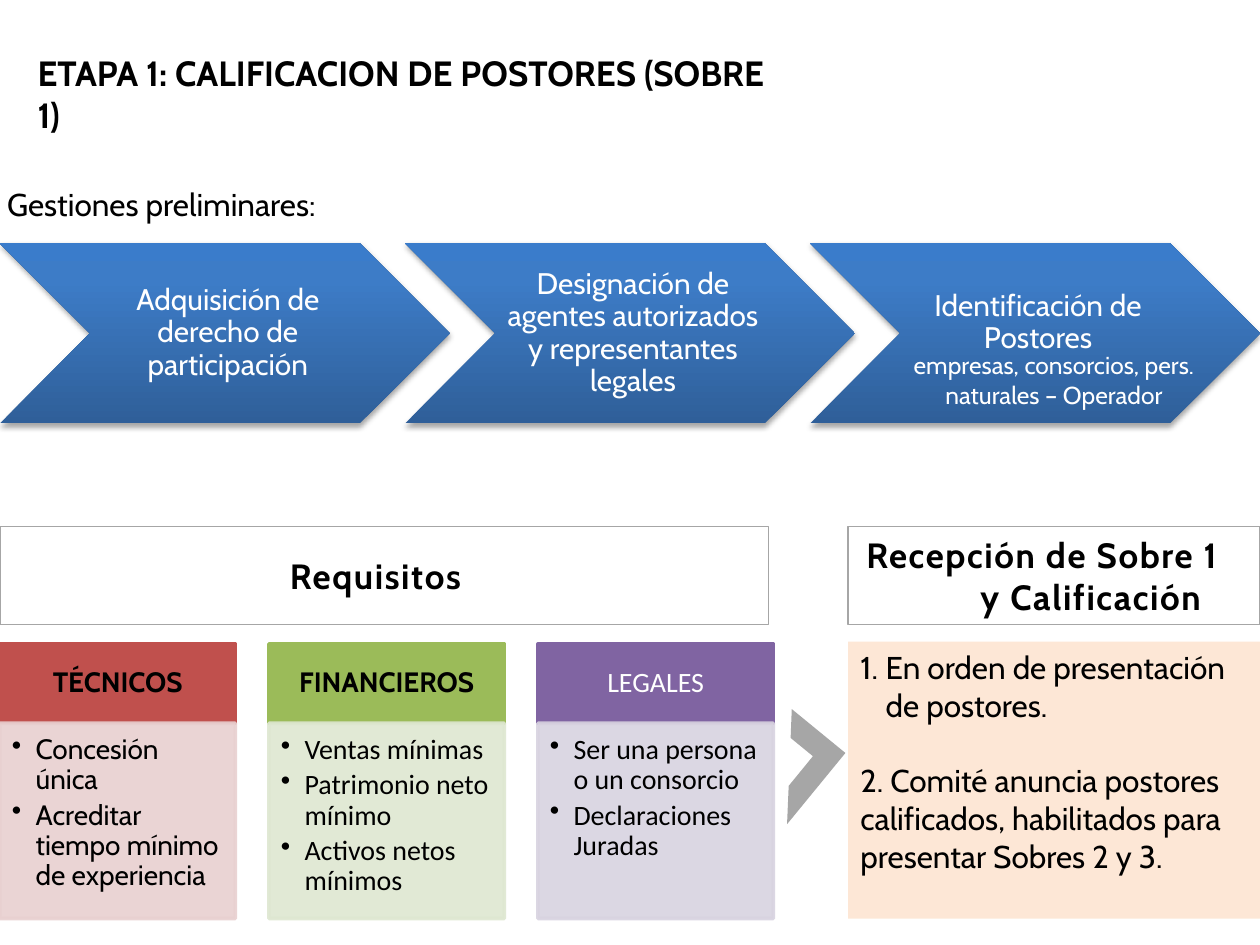
from lxml.etree import SubElement
from pptx import Presentation
from pptx.dml.color import RGBColor
from pptx.enum.shapes import MSO_SHAPE
from pptx.enum.text import MSO_ANCHOR, PP_ALIGN
from pptx.oxml import parse_xml
from pptx.oxml.ns import nsdecls, qn
from pptx.util import Pt

TITLE = "ETAPA 1: CALIFICACION DE POSTORES (SOBRE 1)"
SUBTITLE = "Gestiones preliminares:"
STEPS = [
    "Adquisición de derecho de participación",
    "Designación de agentes autorizados y representantes legales",
    "Identificación de Postores",
]
STEP_NOTE = "empresas, consorcios, pers. naturales – Operador"
# heading, heading font, heading colour, bold, body font, fill, pale fill, items
REQUIREMENTS = [
    ("TÉCNICOS", "Cabin", "000000", True, "Cabin", "C0504D", "E8D0D0",
     ["Concesión única", "Acreditar tiempo mínimo de experiencia"]),
    ("FINANCIEROS", "Cabin", "000000", True, "Calibri", "9BBB59", "DEE7D1",
     ["Ventas mínimas", "Patrimonio neto mínimo", "Activos netos mínimos"]),
    ("LEGALES", "Calibri", "FFFFFF", False, "Calibri", "8064A2", "D8D3E0",
     ["Ser una persona o un consorcio", "Declaraciones Juradas"]),
]
# text, left margin, right margin
REQ_HEADER = [("Requisitos", 0, 10)]
RECEPTION_HEADER = [("Recepción de Sobre 1", 0, 14), ("y Calificación", 42, 0)]
RECEPTION = [
    "En orden de presentación de postores.",
    "2. Comité anuncia postores calificados, habilitados para presentar Sobres 2 y 3.",
]
GREY = "A6A6A6"
STEP_GRADIENT = [(0, "2F5F99"), (80, "3D7CC7"), (100, "3A7CCB")]
DEFAULT_INSETS = (7.2, 3.6, 7.2, 3.6)

prs = Presentation()
prs.slide_width, prs.slide_height = Pt(720), Pt(540)
s = prs.slides.add_slide(prs.slide_layouts[6])


def color(target, value, alpha=100):
    """Give a fill a solid colour, with optional opacity in percent."""
    target.solid()
    target.fore_color.rgb = RGBColor.from_string(value)
    if alpha < 100:
        clr = target._xPr.find(".//" + qn("a:srgbClr"))
        SubElement(clr, qn("a:alpha"), val=str(alpha * 1000))


def frame(sp, insets=DEFAULT_INSETS, anchor=MSO_ANCHOR.TOP):
    tf = sp.text_frame
    tf.word_wrap = True
    tf.vertical_anchor = anchor
    tf.margin_left, tf.margin_top, tf.margin_right, tf.margin_bottom = map(Pt, insets)
    return tf


def shape(kind, x, y, w, h, fill=None, line=None, width=2, alpha=100):
    sp = s.shapes.add_shape(kind, Pt(x), Pt(y), Pt(w), Pt(h))
    sp.shadow.inherit = False
    if fill:
        color(sp.fill, fill, alpha)
    else:
        sp.fill.background()
    if line:
        color(sp.line.fill, line, alpha)
        sp.line.width = Pt(width)
    else:
        sp.line.fill.background()
    return sp


def textbox(x, y, w, h):
    return frame(s.shapes.add_textbox(Pt(x), Pt(y), Pt(w), Pt(h)))


def write(tf, i, text, size, font="Cabin", value="000000", bold=False,
          align=PP_ALIGN.LEFT, spacing=None):
    """Fill paragraph i of a frame with one run; return the paragraph."""
    p = tf.paragraphs[0] if i == 0 else tf.add_paragraph()
    p.alignment = align
    if spacing:
        p.line_spacing = spacing
    r = p.add_run()
    r.text = text
    r.font.size, r.font.name, r.font.bold = Pt(size), font, bold
    color(r.font.fill, value)
    return p


def hang(p, indent, tag, **attrs):
    """Hanging indent with a bullet or number."""
    pPr = p._p.get_or_add_pPr()
    pPr.set("marL", str(Pt(indent)))
    pPr.set("indent", str(-Pt(indent)))
    SubElement(pPr, qn(tag), **attrs)


def step_style(sp):
    """Three-stop gradient and a soft shadow below."""
    spPr = sp._element.spPr
    stops = "".join(f'<a:gs pos="{pos * 1000}"><a:srgbClr val="{c}"/></a:gs>'
                    for pos, c in STEP_GRADIENT)
    grad = parse_xml(f'<a:gradFill {nsdecls("a")} rotWithShape="1"><a:gsLst>{stops}</a:gsLst>'
                     '<a:lin ang="16200000" scaled="0"/></a:gradFill>')
    spPr.replace(spPr.find(qn("a:noFill")), grad)
    shadow = SubElement(spPr.find(qn("a:effectLst")), qn("a:outerShdw"), blurRad=str(Pt(3.1)),
                        dist=str(Pt(1.8)), dir="5400000", rotWithShape="0")
    clr = SubElement(shadow, qn("a:srgbClr"), val="000000")
    SubElement(clr, qn("a:alpha"), val="35000")


# Title and subtitle
write(textbox(14.4, 26, 435, 32), 0, TITLE, 20, bold=True)
write(textbox(-3, 102, 194, 29), 0, SUBTITLE, 18)

# Requirement columns
COL_W, COL_PITCH, HEAD_Y, BODY_Y = 134.6, 153.7, 368, 413.3
for col, (head, head_font, head_color, bold, font, fill, pale, items) in enumerate(REQUIREMENTS):
    x = col * COL_PITCH
    sp = shape(MSO_SHAPE.RECTANGLE, x, HEAD_Y, COL_W, BODY_Y - HEAD_Y, fill, fill)
    tf = frame(sp, (9, 5, 9, 5), MSO_ANCHOR.MIDDLE)
    write(tf, 0, head, 16, head_font, head_color, bold, PP_ALIGN.CENTER, 0.9)
    sp = shape(MSO_SHAPE.RECTANGLE, x, BODY_Y, COL_W, 111.6, pale, pale, alpha=90)
    tf = frame(sp, (6.8, 6.8, 9, 10))
    for i, item in enumerate(items):
        p = write(tf, i, item, 16, font, spacing=0.9)
        p.space_after = Pt(3)
        hang(p, 13.6, "a:buChar", char="•")

# Outlined headers
RIGHT_X, RIGHT_W = 484.6, 235.4
for x, w, lines in [(0, 439.2, REQ_HEADER), (RIGHT_X, RIGHT_W, RECEPTION_HEADER)]:
    sp = shape(MSO_SHAPE.RECTANGLE, x, 301, w, 55.8, line=GREY, width=0.75)
    tf = frame(sp, anchor=MSO_ANCHOR.MIDDLE)
    for i, (text, left, right) in enumerate(lines):
        p = write(tf, i, text, 20, bold=True, align=PP_ALIGN.CENTER)
        p._p.pPr.set("marL", str(Pt(left)))
        p._p.pPr.set("marR", str(Pt(right)))
        p.runs[0].font._element.set("spc", "90")

# Reception panel
sp = shape(MSO_SHAPE.RECTANGLE, RIGHT_X, 366.6, RIGHT_W, 158.4, "FCD5B5", alpha=55)
tf = frame(sp)
first, second = [write(tf, i, text, 18) for i, text in enumerate(RECEPTION)]
first.space_after = Pt(21.6)
hang(first, 14.4, "a:buAutoNum", type="arabicPeriod")

# Arrow from requirements to reception
sp = shape(MSO_SHAPE.HALF_FRAME, 424.8, 418.3, 52.6, 39.6, GREY)
sp.rotation = 129.3

# Preliminary steps
STEP_W, STEP_PITCH = 257, 231.5
for i, text in enumerate(STEPS):
    sp = shape(MSO_SHAPE.CHEVRON, i * STEP_PITCH, 139, STEP_W, 103)
    step_style(sp)
    if i < len(STEPS) - 1:
        tf = frame(sp, (5, 1.5, 1.5, 1.5), MSO_ANCHOR.MIDDLE)
    else:
        tf = frame(sp, (5, 27, 1.5, 1.5))
    write(tf, 0, text, 17, value="FFFFFF", align=PP_ALIGN.CENTER, spacing=0.9)
write(textbox(492.5, 196.6, 219.6, 41), 0, STEP_NOTE, 14, value="FFFFFF", align=PP_ALIGN.CENTER)

prs.save("out.pptx")
